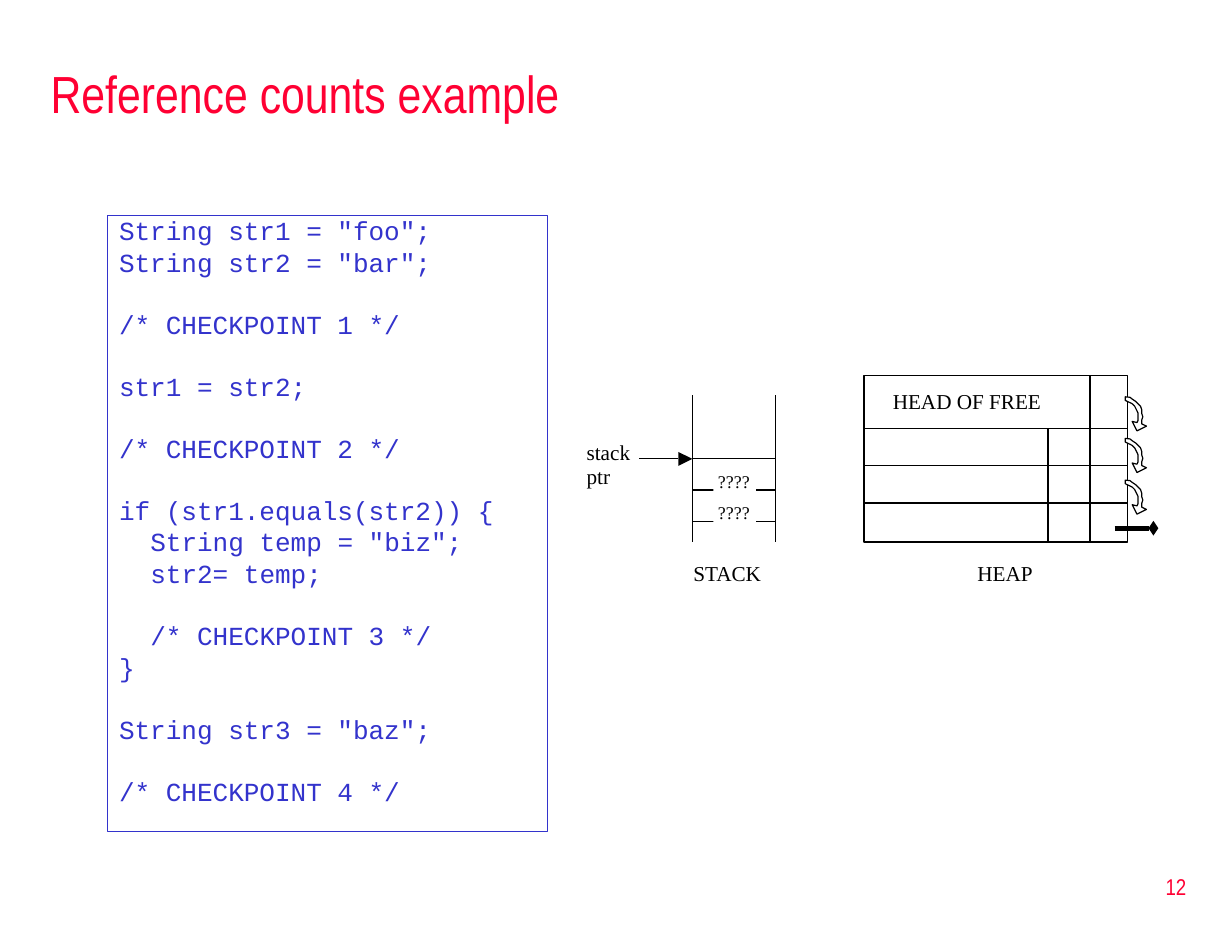
from dataclasses import dataclass
from typing import Optional

from lxml.etree import SubElement
from pptx import Presentation
from pptx.dml.color import RGBColor
from pptx.enum.shapes import MSO_CONNECTOR, MSO_SHAPE
from pptx.enum.text import MSO_ANCHOR, PP_ALIGN
from pptx.oxml.ns import qn
from pptx.util import Pt

RED = RGBColor(0xFF, 0x00, 0x33)
BLUE = RGBColor(0x33, 0x33, 0xCC)
BLACK = RGBColor(0x00, 0x00, 0x00)
WHITE = RGBColor(0xFF, 0xFF, 0xFF)

HEADING = {"name": "Arial Narrow", "size": Pt(32), "color": RED}
PAGE_NUMBER = {**HEADING, "size": Pt(14)}
CODE = {"name": "Courier New", "size": Pt(16), "color": BLUE}
CAPTION = {"name": "Times New Roman", "size": Pt(13), "color": BLACK}
CELL_TEXT = {**CAPTION, "size": Pt(11)}

Point = tuple[float, float]


@dataclass
class Label:
    text: str
    left: float
    top: float
    width: float
    height: float
    style: dict
    inset: Point = (0, 0)
    anchor: MSO_ANCHOR = MSO_ANCHOR.TOP
    align: PP_ALIGN = PP_ALIGN.LEFT
    fill: Optional[RGBColor] = None


@dataclass
class Rule:
    start: Point
    end: Point
    weight: float
    tail: Optional[str] = None


@dataclass
class CodeLine:
    text: str
    gap_before: bool = False
    indented: bool = False


def apply_style(font, style: dict) -> None:
    for attribute, value in style.items():
        if attribute == "color":
            font.color.rgb = value
        else:
            setattr(font, attribute, value)


def set_frame(frame, inset: Point, anchor: MSO_ANCHOR) -> None:
    side, edge = Pt(inset[0]), Pt(inset[1])
    settings = {"margin_left": side, "margin_right": side, "margin_top": edge,
                "margin_bottom": edge, "word_wrap": True, "vertical_anchor": anchor}
    for attribute, value in settings.items():
        setattr(frame, attribute, value)


def draw_label(slide, label: Label) -> None:
    box = slide.shapes.add_textbox(Pt(label.left), Pt(label.top),
                                   Pt(label.width), Pt(label.height))
    if label.fill is not None:
        box.fill.solid()
        box.fill.fore_color.rgb = label.fill
    set_frame(box.text_frame, label.inset, label.anchor)
    paragraph = box.text_frame.paragraphs[0]
    paragraph.alignment = label.align
    run = paragraph.add_run()
    run.text = label.text
    apply_style(run.font, label.style)


def draw_rule(slide, rule: Rule) -> None:
    connector = slide.shapes.add_connector(
        MSO_CONNECTOR.STRAIGHT, *(Pt(v) for v in rule.start + rule.end))
    connector.line.color.rgb = BLACK
    connector.line.width = Pt(rule.weight)
    if rule.tail:
        SubElement(connector.line._get_or_add_ln(), qn("a:tailEnd"),
                   type=rule.tail, w="med", len="sm")
    SubElement(connector._element.spPr, qn("a:effectLst"))


def draw_rectangle(slide, left: float, top: float, width: float, height: float,
                   outline: RGBColor, weight: float):
    box = slide.shapes.add_shape(MSO_SHAPE.RECTANGLE, Pt(left), Pt(top),
                                 Pt(width), Pt(height))
    box.shadow.inherit = False
    box.fill.solid()
    box.fill.fore_color.rgb = WHITE
    box.line.color.rgb = outline
    box.line.width = Pt(weight)
    return box


def draw_outline(slide, corners: list[Point], left: float, top: float,
                 fill: RGBColor, weight: float = 0) -> None:
    points = [(Pt(left + x), Pt(top + y)) for x, y in corners]
    builder = slide.shapes.build_freeform(*points[0])
    builder.add_line_segments(points[1:], close=True)
    outline = builder.convert_to_shape()
    outline.shadow.inherit = False
    outline.fill.solid()
    outline.fill.fore_color.rgb = fill
    if weight:
        outline.line.color.rgb = BLACK
        outline.line.width = Pt(weight)
    else:
        outline.line.fill.background()


def draw_code(slide, lines: list[CodeLine]) -> None:
    line_pitch, spacing, indent = 18.56, 4.06, 19.2
    listing = draw_rectangle(slide, 66, 132, 270, 378, BLUE, 0.75)
    frame = listing.text_frame
    set_frame(frame, (7.2, 3.6), MSO_ANCHOR.TOP)
    for index, line in enumerate(lines):
        paragraph = frame.add_paragraph() if index else frame.paragraphs[0]
        paragraph.alignment = PP_ALIGN.LEFT
        paragraph.line_spacing = 0.8
        paragraph.space_before = Pt(spacing + line_pitch * line.gap_before)
        if line.indented:
            paragraph._p.get_or_add_pPr().set("marL", str(Pt(indent)))
        run = paragraph.add_run()
        run.text = line.text
        apply_style(run.font, CODE)


CODE_LINES = [
    CodeLine('String str1 = "foo";'),
    CodeLine('String str2 = "bar";'),
    CodeLine("/* CHECKPOINT 1 */", gap_before=True),
    CodeLine("str1 = str2;", gap_before=True),
    CodeLine("/* CHECKPOINT 2 */", gap_before=True),
    CodeLine("if (str1.equals(str2)) {", gap_before=True),
    CodeLine('String temp = "biz";', indented=True),
    CodeLine("str2= temp;", indented=True),
    CodeLine("/* CHECKPOINT 3 */", gap_before=True, indented=True),
    CodeLine("}"),
    CodeLine('String str3 = "baz";', gap_before=True),
    CodeLine("/* CHECKPOINT 4 */", gap_before=True),
]

# Curved arrow, relative to its upper left corner
LINK_ARROW = [
    (7.2, 15.8), (7.9, 14.4), (7.9, 12.2), (7.9, 10.1), (7.2, 8.6), (6.5, 7.2),
    (5.8, 5.8), (4.3, 4.3), (2.9, 3.6), (1.4, 2.9), (0, 2.2), (0, 0), (2.9, 0.3),
    (4.3, 1.4), (6.5, 2.9), (7.9, 4.3), (9.4, 5.8), (10.1, 7.9), (10.1, 10.1),
    (10.8, 12.2), (10.1, 14.4), (10.1, 16.6), (13, 18), (7.2, 20.9), (4.3, 15.1),
]
POINTER_HEAD = [(0, 8.6), (8.6, 4.3), (0, 0)]


def draw_heap(slide) -> None:
    left, top, width, height = 530, 230.4, 162, 102
    right, bottom = left + width, top + height
    draw_rectangle(slide, left, top, width, height, BLACK, 1)
    for y in (262.8, 285.6, 308.4):
        draw_rule(slide, Rule((left, y), (right, y), 1))
    for x, start in ((669, top), (643.2, 262.8)):
        draw_rule(slide, Rule((x, start), (x, bottom), 1))
    draw_label(slide, Label("HEAD OF FREE", 547.9, 238.3, 100, 15.8, CAPTION))
    draw_label(slide, Label("HEAP", 599.8, 343.4, 40, 15.8, CAPTION))
    # Links of the free list and its end
    for link in range(3):
        draw_outline(slide, LINK_ARROW, 690.5, 243.4 + 25.56 * link, WHITE, 0.75)
    draw_rule(slide, Rule((684, 324), (707.8, 324), 3, tail="diamond"))


def draw_stack(slide) -> None:
    left, right, top, bottom = 424.8, 476, 242.6, 332.6
    pointer_y, row = 281.5, 19.1
    for x in (left, right):
        draw_rule(slide, Rule((x, top), (x, bottom), 0.75))
    for level in range(3):
        y = pointer_y + row * level
        draw_rule(slide, Rule((left, y), (right, y), 0.75))
    for level in (1, 2):
        draw_label(slide, Label(" ????", 437.8, 269.4 + row * level, 26, 13, CELL_TEXT,
                                fill=WHITE))
    draw_label(slide, Label("STACK", 425.5, 343.4, 50, 15.8, CAPTION))
    # Stack pointer
    draw_rule(slide, Rule((392.4, pointer_y), (416.2, pointer_y), 0.75))
    draw_outline(slide, POINTER_HEAD, 416.2, pointer_y - 4.3, BLACK)
    for text, y in (("stack", 269.3), ("ptr", 284.4)):
        draw_label(slide, Label(text, 360, y, 32, 15.8, CAPTION))


def main() -> None:
    presentation = Presentation()
    presentation.slide_width, presentation.slide_height = Pt(756), Pt(576)
    slide = presentation.slides.add_slide(presentation.slide_layouts[6])
    # Title and page number
    draw_label(slide, Label("Reference counts example", 24, 30, 714, 54, HEADING,
                            (7.2, 3.6), MSO_ANCHOR.MIDDLE))
    draw_label(slide, Label("12", 577.4, 525, 157.7, 38, PAGE_NUMBER,
                            (7.2, 3.6), MSO_ANCHOR.MIDDLE, PP_ALIGN.RIGHT))
    # Program and memory diagrams
    draw_code(slide, CODE_LINES)
    draw_heap(slide)
    draw_stack(slide)
    presentation.save("out.pptx")


if __name__ == "__main__":
    main()
